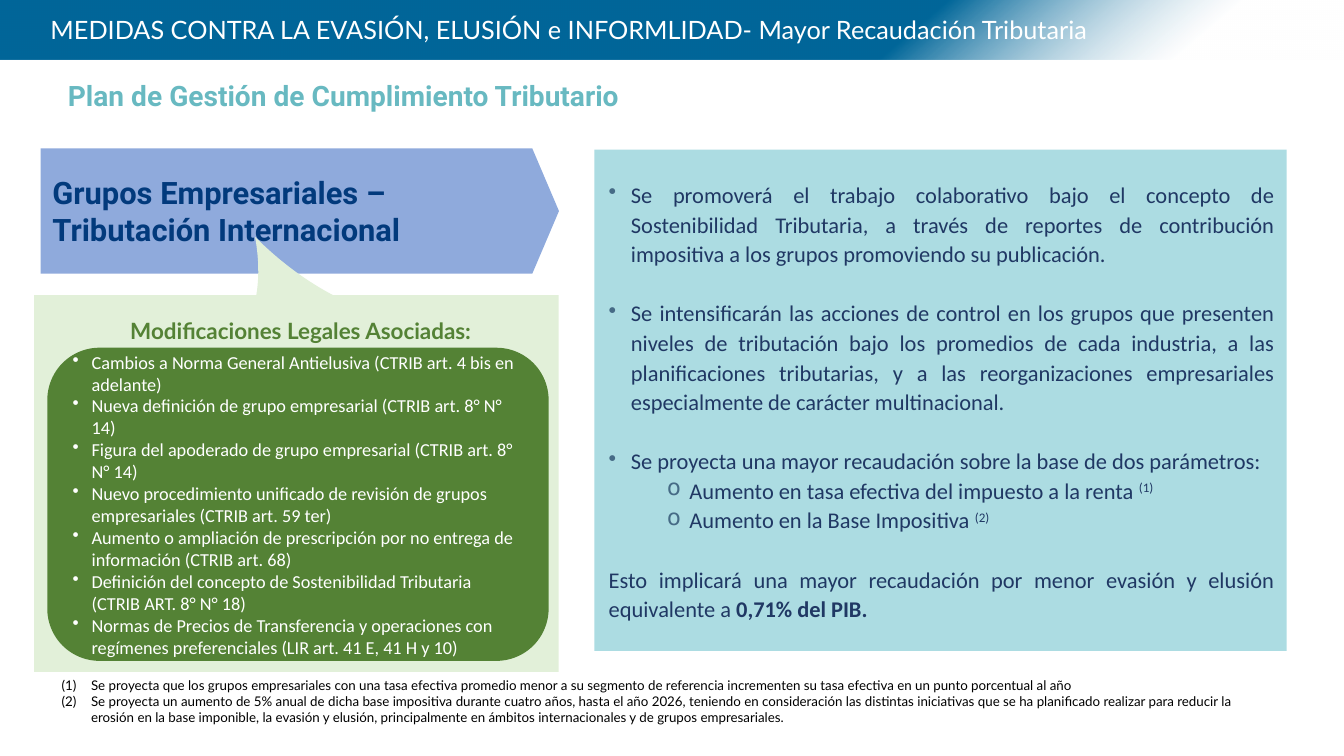
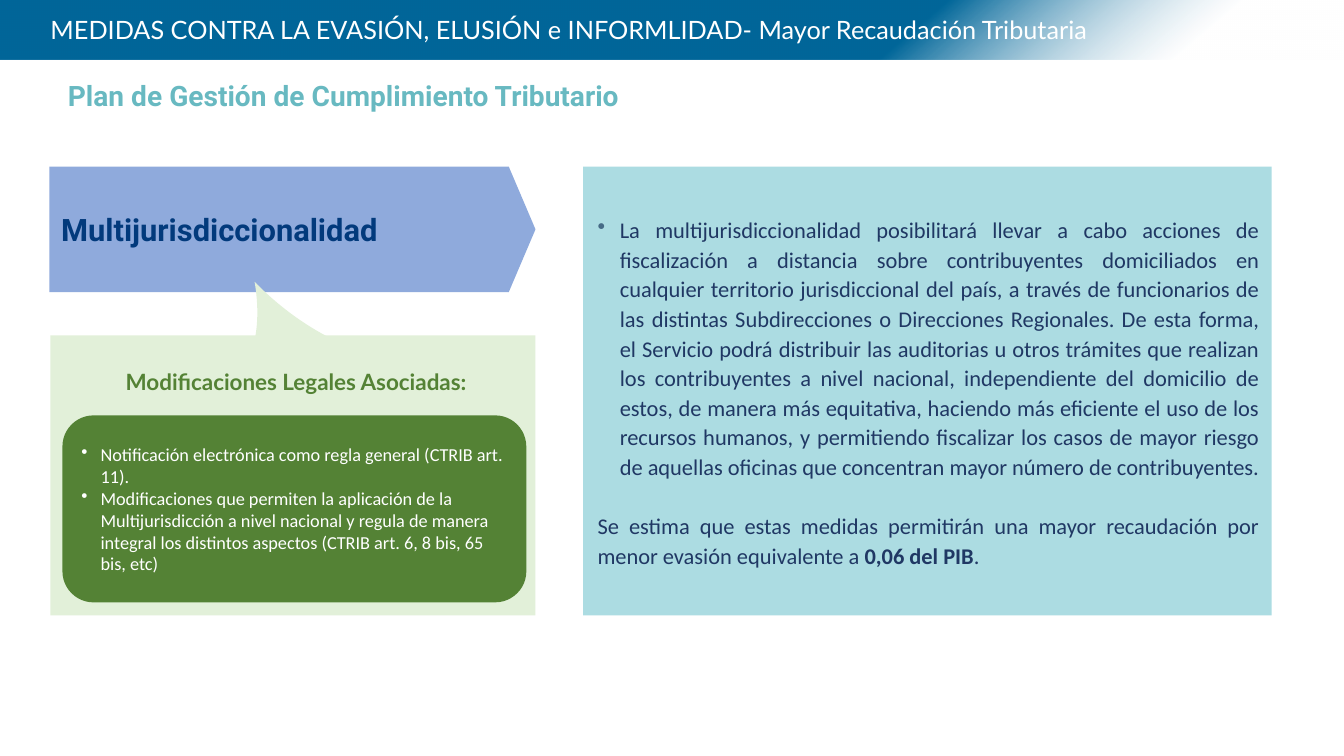
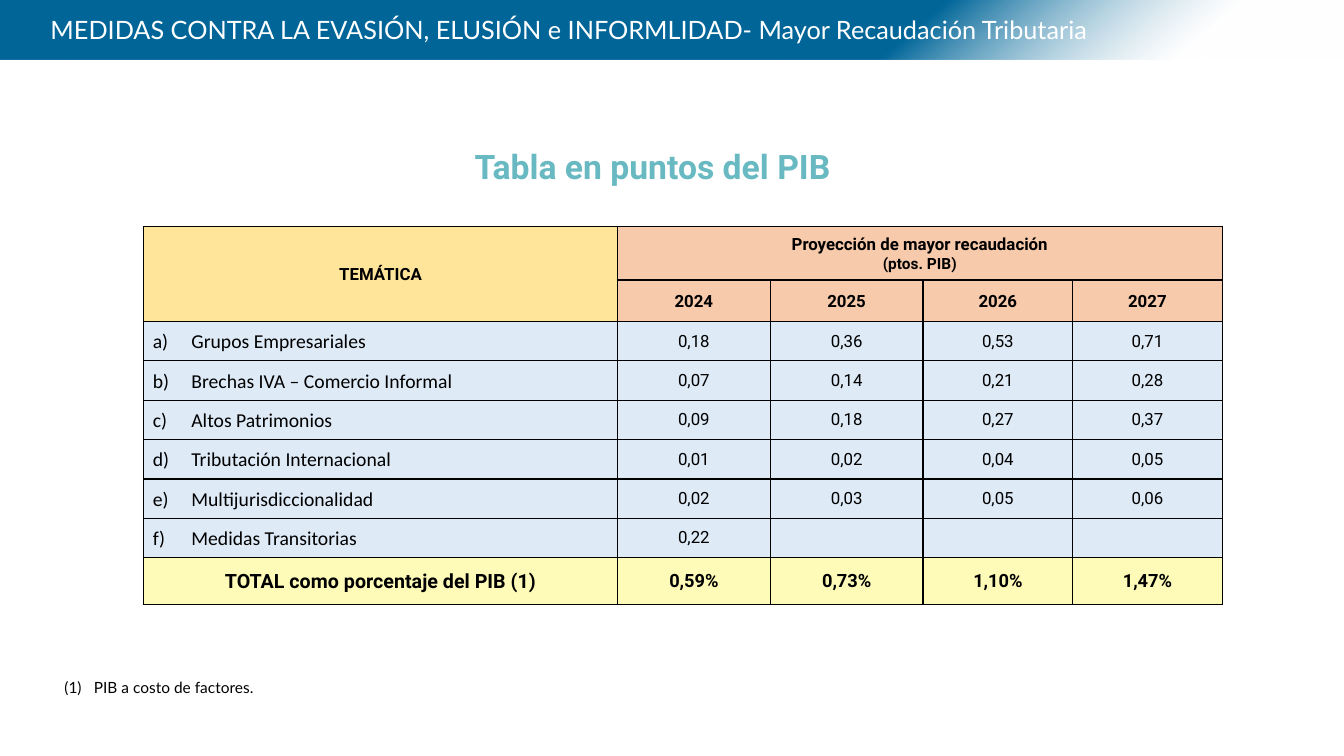
"""Builds three slides on tax compliance measures and their projected revenue."""
from lxml.etree import SubElement
from pptx import Presentation
from pptx.dml.color import RGBColor
from pptx.enum.shapes import MSO_SHAPE
from pptx.enum.text import MSO_ANCHOR, PP_ALIGN
from pptx.oxml.ns import qn
from pptx.util import Cm, Pt

COLORS = {
    "band": "006699", "white": "FFFFFF", "black": "000000", "subtitle": "68B9C1",
    "panel": "ACDCE2", "panel_text": "203864", "panel_bullet": "466B86",
    "plate": "8FAADC", "plate_text": "023A7C",
    "callout": "E2F0D9", "legal": "548235",
    "topic_head": "FFE599", "years_head": "F7CAAC", "body": "DEEAF6", "total": "FEFBB8",
}
BAND_TITLE = "MEDIDAS CONTRA LA EVASIÓN, ELUSIÓN e INFORMLIDAD- Mayor Recaudación Tributaria"
SUBTITLE = "Plan de Gestión de Cumplimiento Tributario"
LEGAL_HEADING = "Modificaciones Legales Asociadas:"

BULLETS = {
    "point": ("a:buChar", {"char": "•"}, 0.56, 0.56, "panel_bullet"),
    "sub": ("a:buChar", {"char": "o"}, 2.03, 0.56, "panel_bullet"),
    "legal": ("a:buChar", {"char": "•"}, 0.48, 0.48, None),
    "note": ("a:buAutoNum", {"type": "arabicParenBoth"}, 0.74, 0.74, None),
    "topic": ("a:buAutoNum", {"type": "alphaLcParenR"}, 0.97, 0.97, None),
}

PLAN_SLIDES = [
    {
        "topic": "Grupos Empresariales – Tributación Internacional",
        "plate": (1.02, 3.73, 13.03, 3.15),
        "panel": (14.94, 3.76, 17.4, 12.6),
        "callout": (0.86, 7.42, 13.18, 9.47),
        "pointer": (6.02, 7.49, 4.27, 3.18),
        "heading": (0.97, 7.7, 13.18, 1.3),
        "legal": (1.19, 8.74, 12.6, 7.87),
        "measures": [
            {"text": "Se promoverá el trabajo colaborativo bajo el concepto de Sostenibilidad Tributaria, a través de reportes de contribución impositiva a los grupos promoviendo su publicación.",
             "bullet": "point"},
            {"text": "Se intensificarán las acciones de control en los grupos que presenten niveles de tributación bajo los promedios de cada industria, a las planificaciones tributarias, y a las reorganizaciones empresariales especialmente de carácter multinacional.",
             "bullet": "point", "before": 21},
            {"text": "Se proyecta una mayor recaudación sobre la base de dos parámetros:",
             "bullet": "point", "before": 21},
            {"text": [("Aumento en tasa efectiva del impuesto a la renta ", ""), ("(1)", "super")],
             "bullet": "sub"},
            {"text": [("Aumento en la Base Impositiva ", ""), ("(2)", "super")], "bullet": "sub"},
            {"text": [("Esto implicará una mayor recaudación por menor evasión y elusión equivalente a ", ""),
                      ("0,71% del PIB.", "bold")], "before": 21},
        ],
        "laws": [
            "Cambios a Norma General Antielusiva (CTRIB art. 4 bis en adelante)",
            "Nueva definición de grupo empresarial (CTRIB art. 8° N° 14)",
            "Figura del apoderado de grupo empresarial (CTRIB art. 8° N° 14)",
            "Nuevo procedimiento unificado de revisión de grupos empresariales (CTRIB art. 59 ter)",
            "Aumento o ampliación de prescripción por no entrega de información (CTRIB art. 68)",
            "Definición del concepto de Sostenibilidad Tributaria (CTRIB ART. 8° N° 18)",
            "Normas de Precios de Transferencia y operaciones con regímenes preferenciales (LIR art. 41 E, 41 H y 10)",
        ],
        "notes": [
            "Se proyecta que los grupos empresariales con una tasa efectiva promedio menor a su segmento de referencia incrementen su tasa efectiva en un punto porcentual al año",
            "Se proyecta un aumento de 5% anual de dicha base impositiva durante cuatro años, hasta el año 2026, teniendo en consideración las distintas iniciativas que se ha planificado realizar para reducir la erosión en la base imponible, la evasión y elusión, principalmente en ámbitos internacionales y de grupos empresariales.",
        ],
    },
    {
        "topic": "Multijurisdiccionalidad",
        "plate": (1.24, 4.19, 12.22, 3.15),
        "panel": (14.66, 4.19, 17.3, 11.28),
        "callout": (1.27, 8.43, 12.19, 7.04),
        "pointer": (6.02, 8.51, 3.94, 3),
        "heading": (1.35, 8.99, 12.19, 1.22),
        "legal": (1.57, 10.44, 11.66, 4.7),
        "measures": [
            {"text": "La multijurisdiccionalidad posibilitará llevar a cabo acciones de fiscalización a distancia sobre contribuyentes domiciliados en cualquier territorio jurisdiccional del país, a través de funcionarios de las distintas Subdirecciones o Direcciones Regionales. De esta forma, el Servicio podrá distribuir las auditorias u otros trámites que realizan los contribuyentes a nivel nacional, independiente del domicilio de estos, de manera más equitativa, haciendo más eficiente el uso de los recursos humanos, y permitiendo fiscalizar los casos de mayor riesgo de aquellas oficinas que concentran mayor número de contribuyentes.",
             "bullet": "point"},
            {"text": [("Se estima que estas medidas permitirán una mayor recaudación por menor evasión equivalente a ", ""),
                      ("0,06 del PIB", "bold"), (".", "")], "before": 21},
        ],
        "laws": [
            "Notificación electrónica como regla general (CTRIB art. 11).",
            "Modificaciones que permiten la aplicación de la Multijurisdicción a nivel nacional y regula de manera integral los distintos aspectos (CTRIB art. 6, 8 bis, 65 bis, etc)",
        ],
        "notes": [],
    },
]

TABLE_TITLE = "Tabla en puntos del PIB"
TABLE_NOTE = "PIB a costo de factores."
TOPIC_HEAD = "TEMÁTICA"
PROJECTION_HEAD = [{"text": "Proyección de mayor recaudación"}, {"text": "(ptos. PIB)", "size": 11}]
YEARS = ["2024", "2025", "2026", "2027"]
PROJECTIONS = [
    ("Grupos Empresariales", "0,18", "0,36", "0,53", "0,71"),
    ("Brechas IVA – Comercio Informal", "0,07", "0,14", "0,21", "0,28"),
    ("Altos Patrimonios", "0,09", "0,18", "0,27", "0,37"),
    ("Tributación Internacional", "0,01", "0,02", "0,04", "0,05"),
    ("Multijurisdiccionalidad", "0,02", "0,03", "0,05", "0,06"),
    ("Medidas Transitorias", "0,22", "", "", ""),
]
TOTALS = ("TOTAL como porcentaje del PIB (1)", "0,59%", "0,73%", "1,10%", "1,47%")
COLUMN_WIDTHS = [11.91, 3.84, 3.84, 3.76, 3.76]
ROW_HEIGHTS = [1.35, 1.04] + [0.99] * len(PROJECTIONS) + [1.17]


def rgb(name):
    return RGBColor.from_string(COLORS[name])


def add_bullet(paragraph, kind, start=None):
    tag, attributes, left, hanging, color = BULLETS[kind]
    properties = paragraph._p.get_or_add_pPr()
    properties.set("marL", str(Cm(left)))
    properties.set("indent", str(-Cm(hanging)))
    if color:
        holder = SubElement(properties, qn("a:buClr"))
        SubElement(holder, qn("a:srgbClr")).set("val", COLORS[color])
    marker = SubElement(properties, qn(tag), attributes)
    if start:
        marker.set("startAt", str(start))


def write(frame, content, size=12, font="Calibri", color="black", bold=False,
          align=PP_ALIGN.LEFT, spacing=None, bullet=None, start=None):
    """Fills a text frame from a string or a list of strings and paragraph dicts."""
    frame.word_wrap = True
    for number, item in enumerate([content] if isinstance(content, str) else content):
        entry = {"text": item} if isinstance(item, str) else item
        paragraph = frame.paragraphs[0] if number == 0 else frame.add_paragraph()
        kind = entry.get("bullet", bullet)
        if kind:
            add_bullet(paragraph, kind, start)
        paragraph.alignment = align
        if spacing:
            paragraph.line_spacing = spacing
        if "before" in entry:
            paragraph.space_before = Pt(entry["before"])
        pieces = entry["text"]
        for text, style in [(pieces, "")] if isinstance(pieces, str) else pieces:
            run = paragraph.add_run()
            run.text = text
            run.font.size = Pt(entry.get("size", size))
            run.font.name = font
            run.font.bold = bold or style == "bold"
            run.font.color.rgb = rgb(color)
            if style == "super":
                run._r.get_or_add_rPr().set("baseline", "30000")


def set_margins(holder, left, top, right, bottom):
    holder.margin_left, holder.margin_top = Cm(left), Cm(top)
    holder.margin_right, holder.margin_bottom = Cm(right), Cm(bottom)


def add_block(slide, preset, place, fill):
    block = slide.shapes.add_shape(preset, *map(Cm, place))
    block.shadow.inherit = False
    block.line.fill.background()
    block.fill.solid()
    block.fill.fore_color.rgb = rgb(fill)
    block.text_frame.vertical_anchor = MSO_ANCHOR.MIDDLE
    return block


def add_label(slide, place, content, margins=(0.25, 0.13, 0.25, 0.13), **style):
    frame = slide.shapes.add_textbox(*map(Cm, place)).text_frame
    set_margins(frame, *margins)
    write(frame, content, **style)


def add_heading(slide, place, text, size):
    add_label(slide, place, text, margins=(0.3, 0.15, 0.3, 0.15), size=size,
              font="Roboto", color="subtitle", bold=True, align=PP_ALIGN.CENTER)


def new_slide(deck):
    slide = deck.slides.add_slide(deck.slide_layouts[6])
    band = add_block(slide, MSO_SHAPE.RECTANGLE, (0, 0, 33.78, 1.5), "band")
    band.fill.gradient()
    band.fill.gradient_angle = 310
    for stop, color, position in zip(band.fill.gradient_stops, ("band", "white"), (0.67, 0.88)):
        stop.color.rgb = rgb(color)
        stop.position = position
    fade = band.element.spPr.findall(".//" + qn("a:srgbClr"))[-1]
    SubElement(fade, qn("a:alpha")).set("val", "42000")
    add_label(slide, (1.02, 0.23, 30.1, 1.07), BAND_TITLE, size=18, font="Lato", color="white")
    return slide


def add_plan_slide(deck, plan):
    slide = new_slide(deck)
    add_heading(slide, (0, 1.83, 17.27, 1.14), SUBTITLE, 20)

    panel = add_block(slide, MSO_SHAPE.RECTANGLE, plan["panel"], "panel")
    set_margins(panel.text_frame, 0.36, 0.15, 0.3, 0.15)
    write(panel.text_frame, plan["measures"], size=16, color="panel_text",
          align=PP_ALIGN.JUSTIFY, spacing=1.1)

    plate = add_block(slide, MSO_SHAPE.PENTAGON, plan["plate"], "plate")
    plate.adjustments[0] = 0.213
    set_margins(plate.text_frame, 0.3, 0.15, 0.3, 0.15)
    write(plate.text_frame, plan["topic"], size=22, font="Roboto", color="plate_text", bold=True)

    add_block(slide, MSO_SHAPE.RECTANGLE, plan["callout"], "callout")
    pointer = add_block(slide, MSO_SHAPE.TEAR, plan["pointer"], "callout")
    pointer.adjustments[0] = 1.345
    pointer.rotation = 24.2
    pointer.element.spPr.find(qn("a:xfrm")).set("flipH", "1")
    add_label(slide, plan["heading"], LEGAL_HEADING, size=16, font="Lato", color="legal",
              bold=True, align=PP_ALIGN.CENTER, spacing=1.2)
    legal = add_block(slide, MSO_SHAPE.ROUNDED_RECTANGLE, plan["legal"], "legal")
    write(legal.text_frame, plan["laws"], size=13, color="white", bullet="legal")

    if plan["notes"]:
        add_label(slide, (1.3, 16.89, 31.04, 1.47), plan["notes"], size=9.5, font="Lato",
                  bullet="note")


def fill_cell(cell, content, fill, margins, thick="", **style):
    properties = cell._tc.get_or_add_tcPr()
    for side in "LRTB":
        width = Pt(1.5 if side in thick else 1)
        border = SubElement(properties, qn("a:ln" + side), {"w": str(width)})
        ink = SubElement(border, qn("a:solidFill"))
        SubElement(ink, qn("a:srgbClr")).set("val", COLORS["black"])
    cell.fill.solid()
    cell.fill.fore_color.rgb = rgb(fill)
    cell.vertical_anchor = MSO_ANCHOR.MIDDLE
    set_margins(cell, *margins)
    if content:
        write(cell.text_frame, content, **style)


def add_table_slide(deck):
    slide = new_slide(deck)
    add_heading(slide, (6.76, 3.51, 19.28, 1.32), TABLE_TITLE, 24)
    table = slide.shapes.add_table(
        len(ROW_HEIGHTS), len(COLUMN_WIDTHS), Cm(3.61), Cm(5.69),
        Cm(sum(COLUMN_WIDTHS)), Cm(sum(ROW_HEIGHTS))).table
    table.first_row = table.horz_banding = False
    for column, width in zip(table.columns, COLUMN_WIDTHS):
        column.width = Cm(width)
    for row, height in zip(table.rows, ROW_HEIGHTS):
        row.height = Cm(height)

    wide, side, tight = (0.28, 0.13, 0.28, 0.13), (0.23, 0, 0.23, 0), (0.03,) * 4
    value = {"font": "Roboto", "align": PP_ALIGN.CENTER}
    head = {**value, "bold": True, "spacing": 1.07}
    last = len(ROW_HEIGHTS) - 1

    for row, text in enumerate([TOPIC_HEAD, ""]):
        fill_cell(table.cell(row, 0), text, "topic_head", wide, thick="R", **head)
    for column, year in enumerate(YEARS, 1):
        edge = "L" if column == 1 else ""
        title = PROJECTION_HEAD if column == 1 else ""
        fill_cell(table.cell(0, column), title, "years_head", wide, thick=edge + "B", **head)
        fill_cell(table.cell(1, column), year, "years_head", side, thick=edge + "T", **head)
    table.cell(0, 0).merge(table.cell(1, 0))
    table.cell(0, 1).merge(table.cell(0, len(YEARS)))

    for number, (topic, *amounts) in enumerate(PROJECTIONS, 1):
        fill_cell(table.cell(number + 1, 0), topic, "body", side, size=14, spacing=1.07,
                  bullet="topic", start=number)
        for column, amount in enumerate(amounts, 1):
            fill_cell(table.cell(number + 1, column), amount, "body", tight, **value)

    fill_cell(table.cell(last, 0), TOTALS[0], "total", side, thick="R", size=14, **head)
    for column, amount in enumerate(TOTALS[1:], 1):
        fill_cell(table.cell(last, column), amount, "total", tight,
                  thick="L" if column == 1 else "", size=13, bold=True, **value)

    add_label(slide, (1.37, 16.92, 31.04, 0.74), [TABLE_NOTE], size=11, font="Lato",
              bullet="note")


def main():
    deck = Presentation()
    deck.slide_width, deck.slide_height = Cm(33.78), Cm(19)
    for plan in PLAN_SLIDES:
        add_plan_slide(deck, plan)
    add_table_slide(deck)
    deck.save("out.pptx")


if __name__ == "__main__":
    main()
